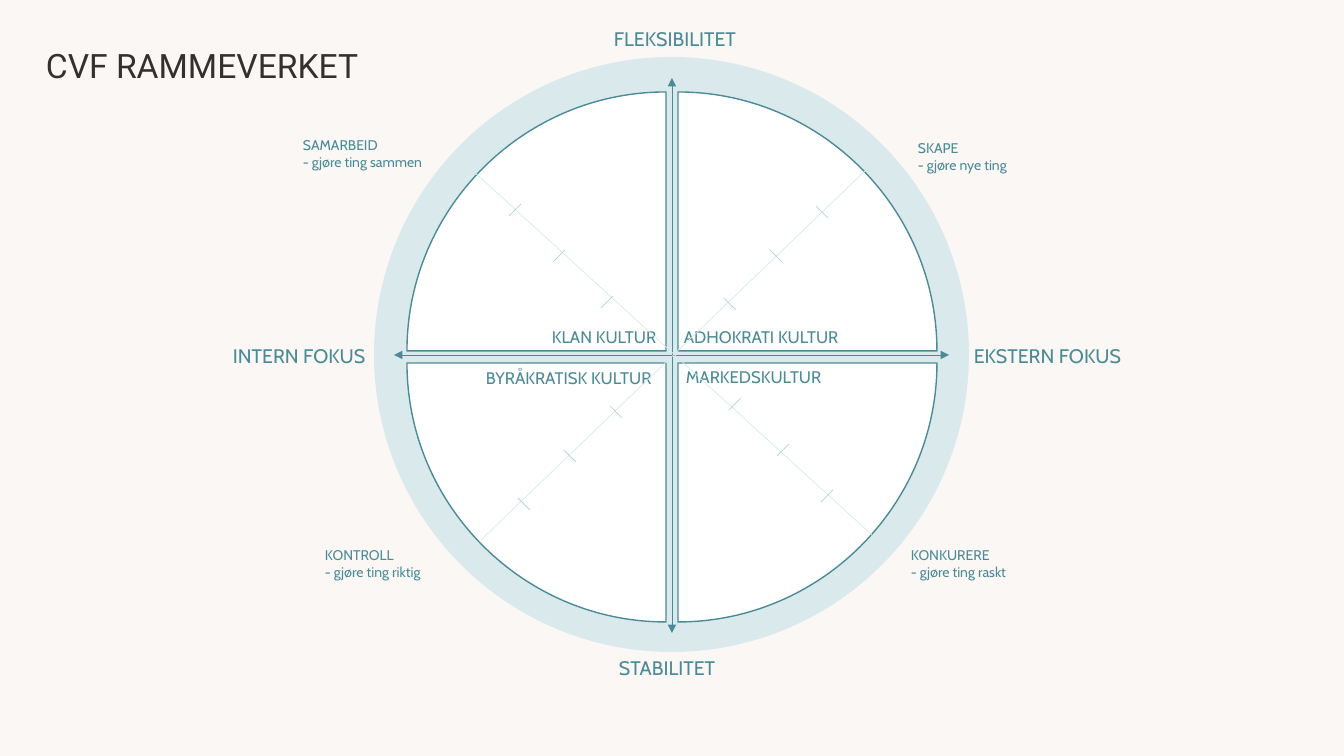
import math
from dataclasses import dataclass

import pptx
import pptx.dml.color
import pptx.enum.shapes
import pptx.enum.text
import pptx.oxml
import pptx.oxml.ns
import pptx.util


@dataclass(frozen=True)
class Theme:
    background: str = "FBF7F5"
    ring: str = "D9E9EC"
    quadrant: str = "FFFFFF"
    accent: str = "4B8B95"
    tick: str = "B3D4D9"
    title: str = "333030"
    body_font: str = "Cabin"
    title_font: str = "Roboto"
    title_size: int = 24
    axis_size: int = 14
    culture_size: int = 12
    action_size: int = 10
    outline: float = 1
    hairline: float = 0.5


THEME = Theme()
PX = 914400 / 100.8
WIDTH, HEIGHT = 1344, 756

RING = (374, 57, 595)
CENTER = (672, 357)
HALF_GAP = 6
RADIUS = 259
CURVE = 0.55
QUADRANT_STARTS = (180, 270, 0, 90)

AXES = [(672, 78, 672, 633), (949, 355, 394, 355)]
DIAGONALS = [(872, 535, 472, 170), (481, 540, 867, 169)]
HALF_TICK = 6
CREATE_TICKS = [(822, 212), (776, 256), (730, 304)]
CONTROL_TICKS = [(616, 412), (570, 456), (524, 504)]
COMPETE_TICKS = [(827, 496), (783, 450), (735, 404)]
COLLABORATE_TICKS = [(515, 210), (559, 256), (607, 302)]

TITLE = [("CVF RAMMEVERKET", 36, 40, 338)]
AXIS_LABELS = [
    ("FLEKSIBILITET", 604, 22, 148),
    ("STABILITET", 609, 651, 122),
    ("INTERN FOKUS", 223, 339, 159),
    ("EKSTERN FOKUS", 964, 339, 172),
]
CULTURES = [
    ("KLAN KULTUR", 542, 322, 130),
    ("ADHOKRATI KULTUR", 674, 322, 182),
    ("BYRÅKRATISK KULTUR", 476, 363, 194),
    ("MARKEDSKULTUR", 676, 362, 160),
]
ACTIONS = [
    ("SAMARBEID\n- gjøre ting sammen", 293, 132, 152),
    ("SKAPE\n- gjøre nye ting", 908, 135, 120),
    ("KONTROLL\n- gjøre ting riktig", 315, 542, 129),
    ("KONKURERE \n- gjøre ting raskt", 901, 542, 127),
]


def emu(px):
    return pptx.util.Emu(round(px * PX))


def rgb(color):
    return pptx.dml.color.RGBColor.from_string(color)


def paint(sp, fill):
    sp.shadow.inherit = False
    sp.fill.solid()
    sp.fill.fore_color.rgb = rgb(fill)


def add_quadrant(shapes, start):
    middle = math.radians(start + 45)
    x = CENTER[0] + math.copysign(HALF_GAP, math.cos(middle))
    y = CENTER[1] + math.copysign(HALF_GAP, math.sin(middle))
    ux, uy = (round(f(math.radians(start))) for f in (math.cos, math.sin))

    def point(along, across):
        return (emu(x + RADIUS * (along * ux - across * uy)),
                emu(y + RADIUS * (along * uy + across * ux)))

    first, last, corner = point(1, 0), point(0, 1), point(0, 0)
    builder = shapes.build_freeform(*first)
    builder.add_line_segments([last, corner, first], close=True)
    sp = builder.convert_to_shape()
    arc_end = sp._element.find(".//" + pptx.oxml.ns.qn("a:lnTo"))
    curve = arc_end.makeelement(pptx.oxml.ns.qn("a:cubicBezTo"), {})
    for px, py in (point(1, CURVE), point(CURVE, 1), last):
        local = {"x": str(px - sp.left), "y": str(py - sp.top)}
        curve.append(curve.makeelement(pptx.oxml.ns.qn("a:pt"), local))
    arc_end.getparent().replace(arc_end, curve)
    paint(sp, THEME.quadrant)
    sp.line.color.rgb = rgb(THEME.accent)
    sp.line.width = pptx.util.Pt(THEME.outline)


def add_line(shapes, ends, color, arrows=False):
    straight = pptx.enum.shapes.MSO_CONNECTOR.STRAIGHT
    sp = shapes.add_connector(straight, *map(emu, ends))
    sp.line.color.rgb = rgb(color)
    sp.line.width = pptx.util.Pt(THEME.hairline)
    if arrows:
        ln = sp.line._get_or_add_ln()
        for tag in ("a:headEnd", "a:tailEnd"):
            end = pptx.oxml.ns.qn(tag)
            ln.append(ln.makeelement(end, {"type": "triangle"}))
    spPr = sp._element.spPr
    spPr.append(spPr.makeelement(pptx.oxml.ns.qn("a:effectLst"), {}))


def add_ticks(shapes, ticks, rise):
    for x, y in ticks:
        ends = (x - HALF_TICK, y - rise, x + HALF_TICK, y + rise)
        add_line(shapes, ends, THEME.tick)


def add_labels(s, labels, height, size, font, color):
    for text, left, top, width in labels:
        sp = s.shapes.add_textbox(*map(emu, (left, top, width, height)))
        tf = sp.text_frame
        tf.word_wrap = False
        tf.auto_size = pptx.enum.text.MSO_AUTO_SIZE.SHAPE_TO_FIT_TEXT
        p = tf.paragraphs[0]
        p.text = text
        for r in p.runs:
            r.font.name = font
            r.font.size = pptx.util.Pt(size)
            r.font.color.rgb = rgb(color)


def main():
    prs = pptx.Presentation()
    prs.slide_width, prs.slide_height = emu(WIDTH), emu(HEIGHT)
    s = prs.slides.add_slide(prs.slide_layouts[6])
    s.background.fill.solid()
    s.background.fill.fore_color.rgb = rgb(THEME.background)

    left, top, diameter = RING
    ring = s.shapes.add_shape(pptx.enum.shapes.MSO_SHAPE.OVAL,
                              *map(emu, (left, top, diameter, diameter)))
    paint(ring, THEME.ring)
    ring.line.fill.background()
    quadrants = s.shapes.add_group_shape()
    for start in QUADRANT_STARTS:
        add_quadrant(quadrants.shapes, start)
    for ends in AXES:
        add_line(s.shapes, ends, THEME.accent, arrows=True)

    for labels, height, size in ((AXIS_LABELS, 34, THEME.axis_size),
                                 (CULTURES, 30, THEME.culture_size),
                                 (ACTIONS, 44, THEME.action_size)):
        add_labels(s, labels, height, size, THEME.body_font, THEME.accent)
    add_labels(s, TITLE, 50, THEME.title_size, THEME.title_font, THEME.title)

    for ends in DIAGONALS:
        add_line(s.shapes, ends, THEME.ring)
    add_ticks(s.shapes, CREATE_TICKS, HALF_TICK)
    for ticks, rise in ((CONTROL_TICKS, HALF_TICK),
                        (COMPETE_TICKS, -HALF_TICK),
                        (COLLABORATE_TICKS, -HALF_TICK)):
        add_ticks(s.shapes.add_group_shape().shapes, ticks, rise)

    prs.save("out.pptx")


if __name__ == "__main__":
    main()
